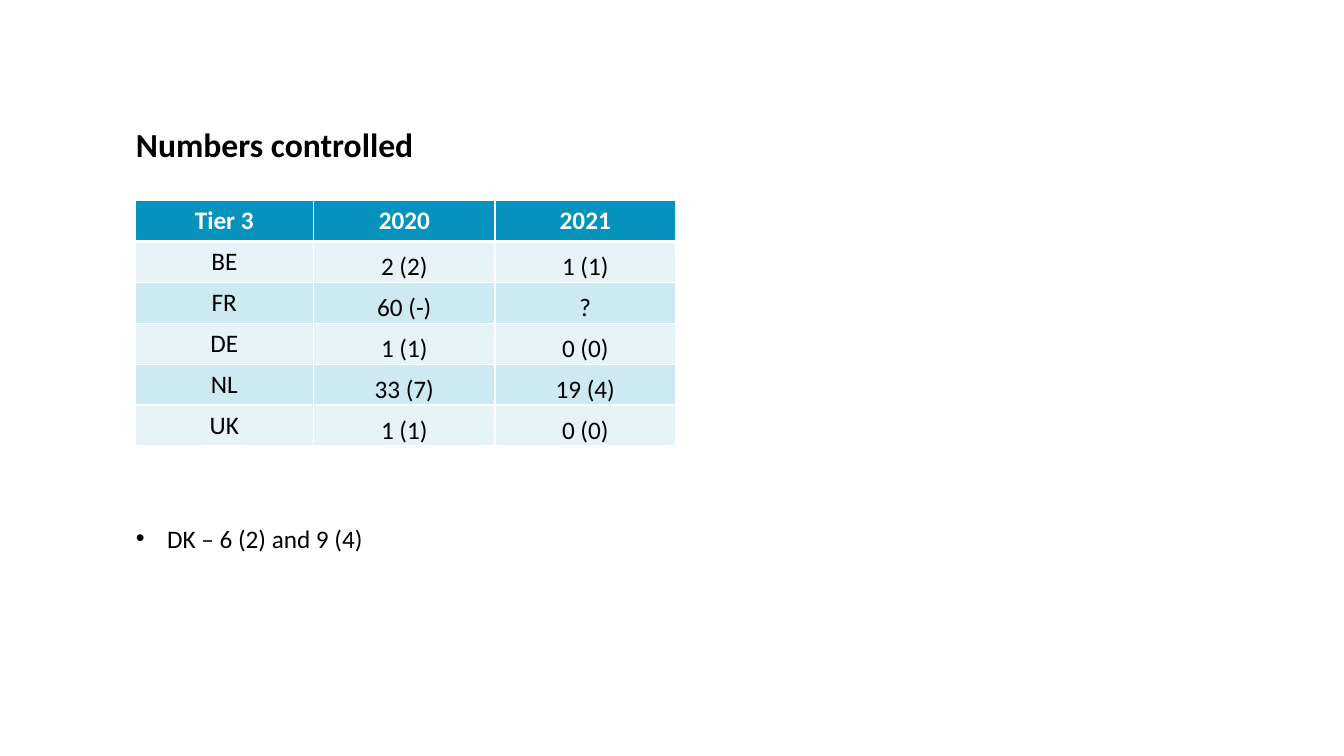
from lxml.etree import SubElement
from pptx import Presentation
from pptx.dml.color import RGBColor
from pptx.enum.text import MSO_ANCHOR, PP_ALIGN
from pptx.oxml.ns import qn
from pptx.util import Inches, Pt

WHITE = RGBColor(0xFF, 0xFF, 0xFF)
BLACK = RGBColor(0x00, 0x00, 0x00)
HEADER_BLUE = RGBColor(0x05, 0x92, 0xBD)
BANDS = (RGBColor(0xE6, 0xF4, 0xF8), RGBColor(0xCD, 0xE9, 0xF2))

COLUMN_WIDTHS = (1.77, 1.8, 1.79)
ROW_HEIGHT = 0.405
TIER_ROWS = (
    ("Tier 3", "2020", "2021"),
    ("BE", "2 (2)", "1 (1)"),
    ("FR", "60 (-)", "?"),
    ("DE", "1 (1)", "0 (0)"),
    ("NL", "33 (7)", "19 (4)"),
    ("UK", "1 (1)", "0 (0)"),
)


class SlideBuilder:
    font = "Calibri"

    def __init__(self, slide):
        self.s = slide

    def run(self, p, text, size=18, color=BLACK, bold=False):
        r = p.add_run()
        r.text = text
        r.font.name = self.font
        r.font.size = Pt(size)
        r.font.bold = bold
        r.font.color.rgb = color

    def text(self, left, top, width, height, text, size=18, bold=False,
             margin=0, indent=0, bullet=None, wrap=True, spacing=1.0):
        box = self.s.shapes.add_textbox(
            Inches(left), Inches(top), Inches(width), Inches(height))
        tf = box.text_frame
        tf.word_wrap = wrap
        p = tf.paragraphs[0]
        p.line_spacing = spacing
        pPr = p._p.get_or_add_pPr()
        pPr.set("marL", str(Inches(margin)))
        pPr.set("indent", str(Inches(indent)))
        if bullet:
            SubElement(pPr, qn("a:buFont"), typeface="Arial")
            SubElement(pPr, qn("a:buChar"), char=bullet)
        self.run(p, text, size, bold=bold)

    def borders(self, cell, bottom):
        """Draw white cell edges, with the bottom one of the given width in points."""
        tcPr = cell._tc.get_or_add_tcPr()
        edges = (("a:lnL", 1), ("a:lnR", 1), ("a:lnT", 1), ("a:lnB", bottom))
        for position, (tag, width) in enumerate(edges):
            ln = tcPr.makeelement(qn(tag), {"w": str(Pt(width))})
            fill = SubElement(ln, qn("a:solidFill"))
            SubElement(fill, qn("a:srgbClr"), val=str(WHITE))
            tcPr.insert(position, ln)

    def table(self, left, top, widths, row_height, rows):
        frame = self.s.shapes.add_table(
            len(rows), len(widths), Inches(left), Inches(top),
            Inches(sum(widths)), Inches(row_height * len(rows)))
        table = frame.table
        for column, width in zip(table.columns, widths):
            column.width = Inches(width)
        for i, values in enumerate(rows):
            table.rows[i].height = Inches(row_height)
            header = i == 0
            for j, value in enumerate(values):
                cell = table.cell(i, j)
                cell.fill.solid()
                cell.fill.fore_color.rgb = HEADER_BLUE if header else BANDS[(i - 1) % 2]
                p = cell.text_frame.paragraphs[0]
                p.alignment = PP_ALIGN.CENTER
                if not header and j > 0:
                    cell.vertical_anchor = MSO_ANCHOR.BOTTOM
                    cell.margin_left = cell.margin_right = Inches(0.07)
                    cell.margin_top = cell.margin_bottom = 0
                    p.line_spacing = 1.07
                self.run(p, value, color=WHITE if header else BLACK, bold=header)
                self.borders(cell, bottom=3 if header else 1)


def main():
    prs = Presentation()
    prs.slide_width = Inches(13.33)
    prs.slide_height = Inches(7.5)
    b = SlideBuilder(prs.slides.add_slide(prs.slide_layouts[6]))
    b.table(1.34, 1.99, COLUMN_WIDTHS, ROW_HEIGHT, TIER_ROWS)
    b.text(1, 1.23, 10.82, 0.57, "Numbers controlled", size=24, bold=True,
           margin=0.25, spacing=0.9)
    b.text(1, 5.14, 2.74, 0.71, "DK – 6 (2) and 9 (4)",
           margin=0.56, indent=-0.31, bullet="•", wrap=False)
    prs.save("out.pptx")


if __name__ == "__main__":
    main()
